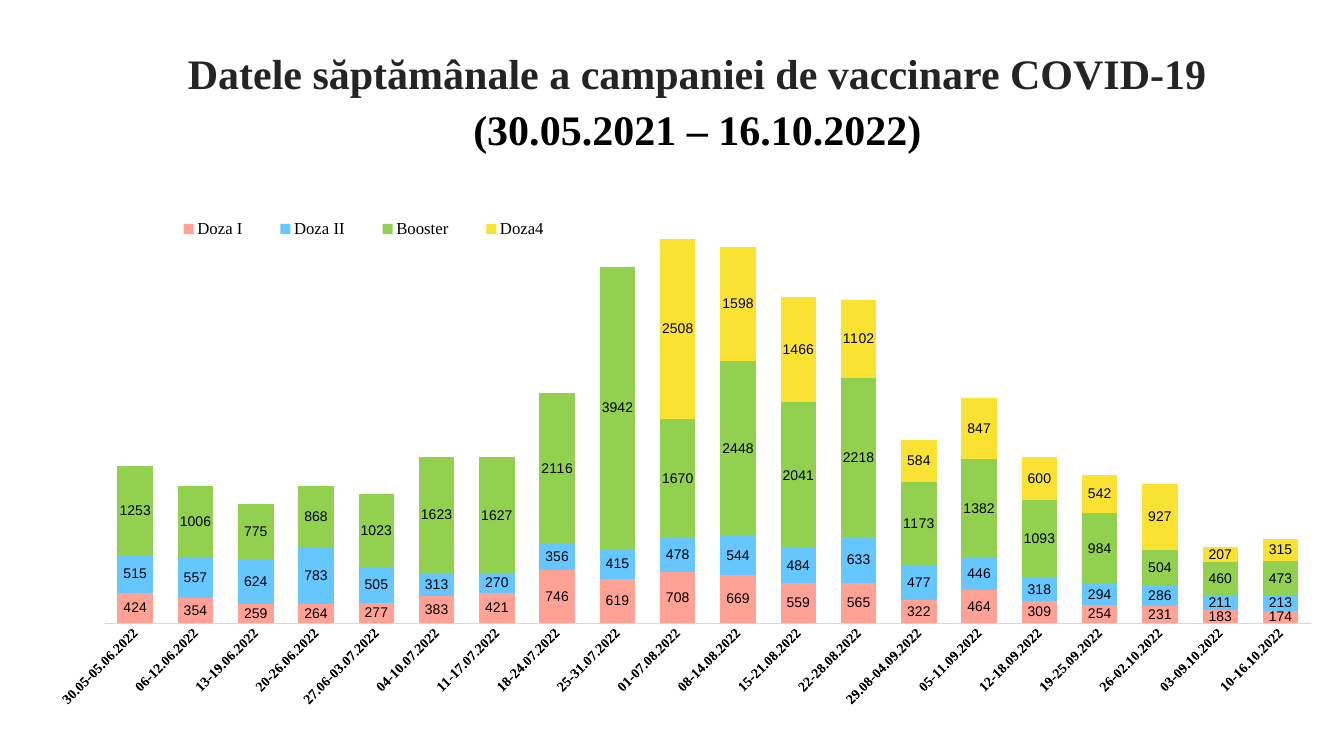
from lxml.etree import SubElement
from pptx import Presentation
from pptx.chart.data import CategoryChartData
from pptx.dml.color import RGBColor
from pptx.enum.chart import (XL_CHART_TYPE, XL_LABEL_POSITION,
                             XL_LEGEND_POSITION, XL_TICK_MARK)
from pptx.enum.text import PP_ALIGN
from pptx.oxml import parse_xml
from pptx.oxml.ns import nsdecls, qn
from pptx.util import Pt

PX = 9144  # EMU per px, 100 px to the inch
SERIF, SANS = "Times New Roman", "Arial"
COLORS = {"title": "242423", "text": "000000", "axis": "D9D9D9",
          "Doza I": "FFA295", "Doza II": "66C7FF",
          "Booster": "92D050", "Doza4": "FAE232"}

WEEKS = [
    "30.05-05.06.2022", "06-12.06.2022", "13-19.06.2022", "20-26.06.2022",
    "27.06-03.07.2022", "04-10.07.2022", "11-17.07.2022", "18-24.07.2022",
    "25-31.07.2022", "01-07.08.2022", "08-14.08.2022", "15-21.08.2022",
    "22-28.08.2022", "29.08-04.09.2022", "05-11.09.2022", "12-18.09.2022",
    "19-25.09.2022", "26-02.10.2022", "03-09.10.2022", "10-16.10.2022"]
DOSES = {
    "Doza I": [424, 354, 259, 264, 277, 383, 421, 746, 619, 708,
               669, 559, 565, 322, 464, 309, 254, 231, 183, 174],
    "Doza II": [515, 557, 624, 783, 505, 313, 270, 356, 415, 478,
                544, 484, 633, 477, 446, 318, 294, 286, 211, 213],
    "Booster": [1253, 1006, 775, 868, 1023, 1623, 1627, 2116, 3942, 1670,
                2448, 2041, 2218, 1173, 1382, 1093, 984, 504, 460, 473],
    "Doza4": [None] * 9 + [2508, 1598, 1466, 1102, 584, 847,
                           600, 542, 927, 207, 315]}


def rgb(name):
    return RGBColor.from_string(COLORS[name])


def emu(box):
    return [n * PX for n in box]


def style(font, size, face=SERIF, color="text", bold=False):
    font.size, font.name, font.bold = Pt(size), face, bold
    font.color.rgb = rgb(color)


def place(part, index, box, inner=False):
    """Give a chart part a manual layout, as fractions of the chart."""
    for old in part.findall(qn("c:layout")):
        part.remove(old)
    layout = parse_xml(f"<c:layout {nsdecls('c')}><c:manualLayout/></c:layout>")
    rules = [("layoutTarget", "inner")] if inner else []
    rules += [("xMode", "edge"), ("yMode", "edge"), *zip("xywh", box)]
    for tag, val in rules:
        SubElement(layout[0], qn(f"c:{tag}")).set("val", str(val))
    part.insert(index, layout)


def add_title(slide, box):
    frame = slide.shapes.add_textbox(*emu(box)).text_frame
    frame.word_wrap = True
    frame.margin_left = frame.margin_right = 0
    frame.margin_top = frame.margin_bottom = 0
    lines = [("Datele săptămânale a campaniei de vaccinare COVID-19", "title"),
             ("(30.05.2021 – 16.10.2022)", "text")]
    frame.text = "\n".join(text for text, _ in lines)
    for para, (_, color) in zip(frame.paragraphs, lines):
        para.alignment = PP_ALIGN.CENTER
        para.line_spacing = Pt(80)
        style(para.font, 60, color=color, bold=True)


def style_axes(chart):
    weeks, count = chart.category_axis, chart.value_axis
    weeks.major_tick_mark = weeks.minor_tick_mark = XL_TICK_MARK.NONE
    weeks.format.line.color.rgb = rgb("axis")
    weeks.format.line.width = Pt(0.75)
    style(weeks.tick_labels.font, 20, bold=True)
    weeks._element.find(qn("c:txPr")).find(qn("a:bodyPr")).set("rot", "-2700000")
    count.minimum_scale, count.maximum_scale = 0, 6000
    count.has_major_gridlines = False
    count.visible = False


def add_doses(slide, box):
    data = CategoryChartData()
    data.categories = WEEKS
    for name, vals in DOSES.items():
        data.add_series(name, vals)
    chart = slide.shapes.add_chart(
        XL_CHART_TYPE.COLUMN_STACKED, *emu(box), data).chart
    chart.has_title = False
    style(chart.font, 16, SANS)
    style_axes(chart)

    plot = chart.plots[0]
    plot.gap_width, plot.overlap = 70, 100
    plot.vary_by_categories = False
    for dose in plot.series:
        dose.format.fill.solid()
        dose.format.fill.fore_color.rgb = rgb(dose.name)
        labels = dose.data_labels
        labels.show_value = True
        labels.position = XL_LABEL_POSITION.CENTER
        style(labels.font, 20, SANS)

    chart.has_legend = True
    legend = chart.legend
    legend.position = XL_LEGEND_POSITION.BOTTOM
    legend.include_in_layout = False
    style(legend.font, 24)
    place(legend._element, 1, (0.07, 0.06, 0.34, 0.05))
    area = chart._chartSpace.chart.plotArea
    place(area, 0, (0.033, 0.018, 0.975 - 0.01, 0.811), inner=True)


def main():
    deck = Presentation()
    deck.slide_width, deck.slide_height = 2667 * PX, 1500 * PX
    slide = deck.slides.add_slide(deck.slide_layouts[6])
    add_title(slide, (189, 84, 2389, 224))
    add_doses(slide, (117, 365, 2489, 1051))
    deck.save("out.pptx")


if __name__ == "__main__":
    main()
